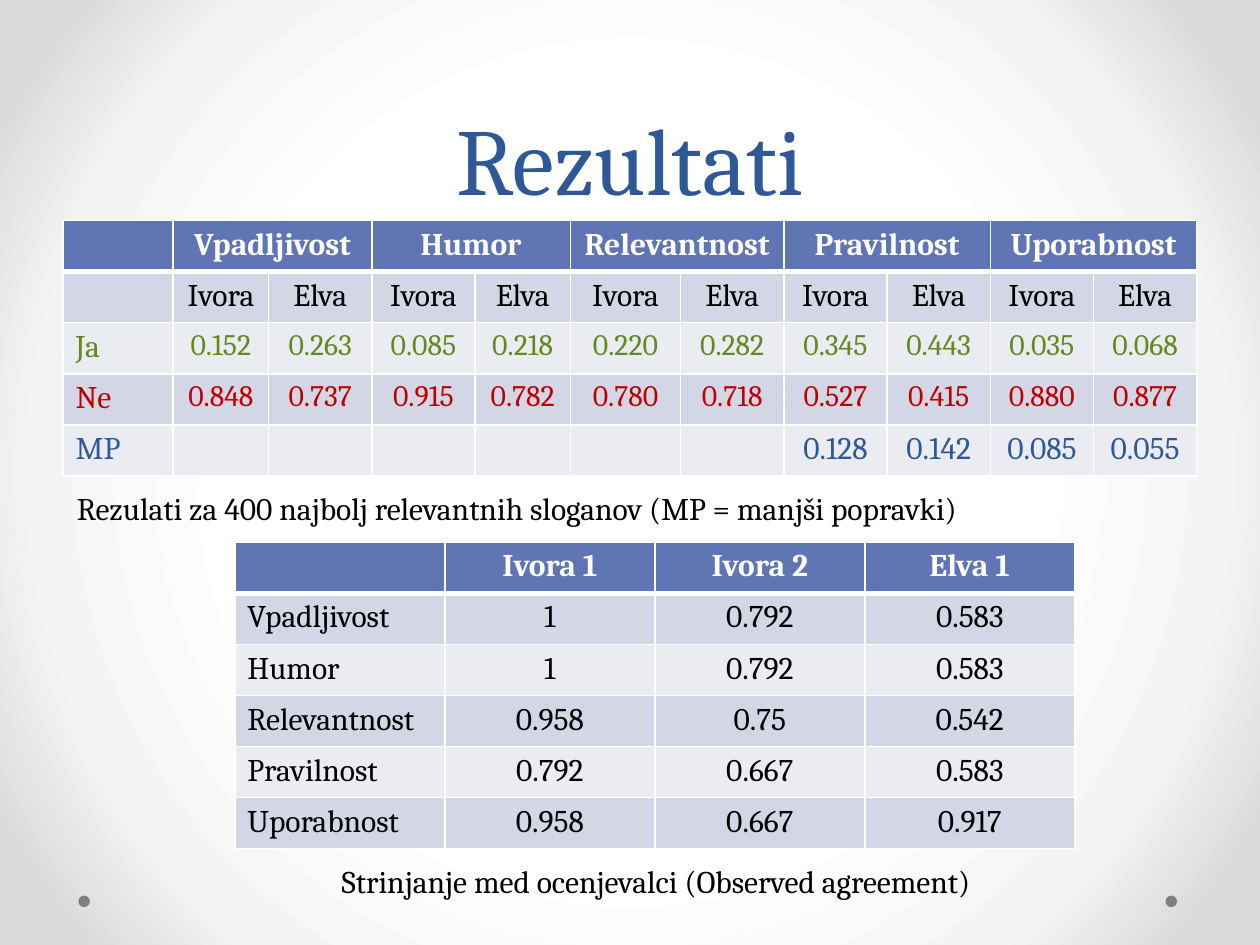
from dataclasses import dataclass

from pptx import Presentation
from pptx.dml.color import RGBColor
from pptx.enum.shapes import MSO_SHAPE
from pptx.enum.text import MSO_ANCHOR, PP_ALIGN
from pptx.oxml import parse_xml
from pptx.oxml.ns import nsdecls, qn
from pptx.util import Pt

LEFT, MID = PP_ALIGN.LEFT, PP_ALIGN.CENTER
TOP, BASE = MSO_ANCHOR.TOP, MSO_ANCHOR.BOTTOM
DOT = MSO_SHAPE.OVAL


@dataclass(frozen=True)
class Theme:
    font: str = "Cambria"
    big: int = 54
    body: int = 18
    small: int = 17
    blue: str = "2F5897"
    head: str = "6076B4"
    bands: tuple = ("EAECF2", "D2D6E5")
    white: str = "FFFFFF"
    black: str = "000000"
    green: str = "63891F"
    red: str = "C00000"
    gray: str = "808080"
    glow: tuple = ((50, "FFFFFF"), (76, "F4F4F4"), (92, "DADADA"))


T = Theme()


def put_text(frame, text, align, size=T.body, color=T.black, bold=False):
    par = frame.paragraphs[0]
    par.alignment = align
    run = par.add_run()
    run.text = text
    run.font.name = T.font
    run.font.size = Pt(size)
    run.font.bold = bold
    run.font.color.rgb = RGBColor.from_string(color)


def add_grid(left, top, widths, rows, styles):
    """Add a banded table; styles holds the (text colour, value size) of each row."""
    high = 29.2
    frame = slide.shapes.add_table(len(rows), len(widths), Pt(left), Pt(top),
                                   Pt(sum(widths)), Pt(high * len(rows)))
    grid = frame.table
    for col, width in zip(grid.columns, widths):
        col.width = Pt(width)
    for r, (row, (color, size)) in enumerate(zip(rows, styles)):
        grid.rows[r].height = Pt(high)
        for c, text in enumerate(row):
            cell = grid.cell(r, c)
            props = cell._tc.get_or_add_tcPr()
            for side in "LRTB":
                thick = (r, side) in ((0, "B"), (1, "T"))
                props.append(parse_xml(
                    f'<a:ln{side} {nsdecls("a")} w="{Pt(3 if thick else 1)}">'
                    f'<a:solidFill><a:srgbClr val="{T.white}"/></a:solidFill>'
                    f'</a:ln{side}>'))
            cell.fill.solid()
            shade = T.bands[r % 2] if r else T.head
            cell.fill.fore_color.rgb = RGBColor.from_string(shade)
            if text:
                put_text(cell.text_frame, text, MID if c else LEFT,
                         size if c else T.body, color, r == 0)
    return grid


deck = Presentation()
deck.slide_width, deck.slide_height = Pt(720), Pt(540)
slide = deck.slides.add_slide(deck.slide_layouts[6])

# Background glow
slide.background.fill.gradient()
fill = slide._element.find(".//" + qn("a:gradFill"))
stops = "".join(f'<a:gs pos="{pos * 1000}"><a:srgbClr val="{color}"/></a:gs>'
                for pos, color in T.glow)
fill.getparent().replace(fill, parse_xml(
    f'<a:gradFill {nsdecls("a")} rotWithShape="1"><a:gsLst>{stops}</a:gsLst>'
    '<a:path path="circle"><a:fillToRect l="50000" t="50000" r="50000" b="50000"/>'
    '</a:path></a:gradFill>'))

# Corner dots
for left in (666, 44.8):
    dot = slide.shapes.add_shape(DOT, Pt(left), Pt(511.8), Pt(6.6), Pt(6.6))
    dot.shadow.inherit = False
    dot.fill.solid()
    dot.fill.fore_color.rgb = RGBColor.from_string(T.gray)
    dot.line.fill.background()

# Title and captions
texts = (
    ("Rezultati", (36, 0, 648, 126), MID, BASE, T.big, T.blue, Pt(58)),
    ("Rezulati za 400 najbolj relevantnih sloganov (MP = manjši popravki)",
     (36.8, 276, 646.6, 29), LEFT, TOP, T.body, T.black, None),
    ("Strinjanje med ocenjevalci (Observed agreement)",
     (145.2, 488.8, 459.4, 29), MID, TOP, T.body, T.black, None),
)
for text, area, align, anchor, size, color, gap in texts:
    frame = slide.shapes.add_textbox(*map(Pt, area)).text_frame
    frame.word_wrap = True
    frame.vertical_anchor = anchor
    put_text(frame, text, align, size, color)
    frame.paragraphs[0].line_spacing = gap

# Scores by trait and rater
traits = ("Vpadljivost", "Humor", "Relevantnost", "Pravilnost", "Uporabnost")
raters = ("Ivora", "Elva")
heads = [""]
for trait in traits:
    heads += [trait, ""]
scores = [
    heads,
    ["", *raters * len(traits)],
    ["Ja", "0.152", "0.263", "0.085", "0.218", "0.220", "0.282",
     "0.345", "0.443", "0.035", "0.068"],
    ["Ne", "0.848", "0.737", "0.915", "0.782", "0.780", "0.718",
     "0.527", "0.415", "0.880", "0.877"],
    ["MP", *[""] * 6, "0.128", "0.142", "0.085", "0.055"],
]
styles = [(T.white, T.body), (T.black, T.body), (T.green, T.small),
          (T.red, T.small), (T.blue, T.body)]
widths = [63, 54.5, 59, 59, 54.5, 63] + [59] * 5
grid = add_grid(36, 126, widths, scores, styles)
for c in range(1, len(widths), 2):
    grid.cell(0, c).merge(grid.cell(0, c + 1))

# Agreement between raters
values = (("1", "0.792", "0.583"), ("1", "0.792", "0.583"),
          ("0.958", "0.75", "0.542"), ("0.792", "0.667", "0.583"),
          ("0.958", "0.667", "0.917"))
match = [["", f"{raters[0]} 1", f"{raters[0]} 2", f"{raters[1]} 1"]]
match += [[trait, *row] for trait, row in zip(traits, values)]
add_grid(134.2, 309.8, [120] * 4, match,
         [(T.white, T.body)] + [(T.black, T.body)] * len(traits))

deck.save("out.pptx")
